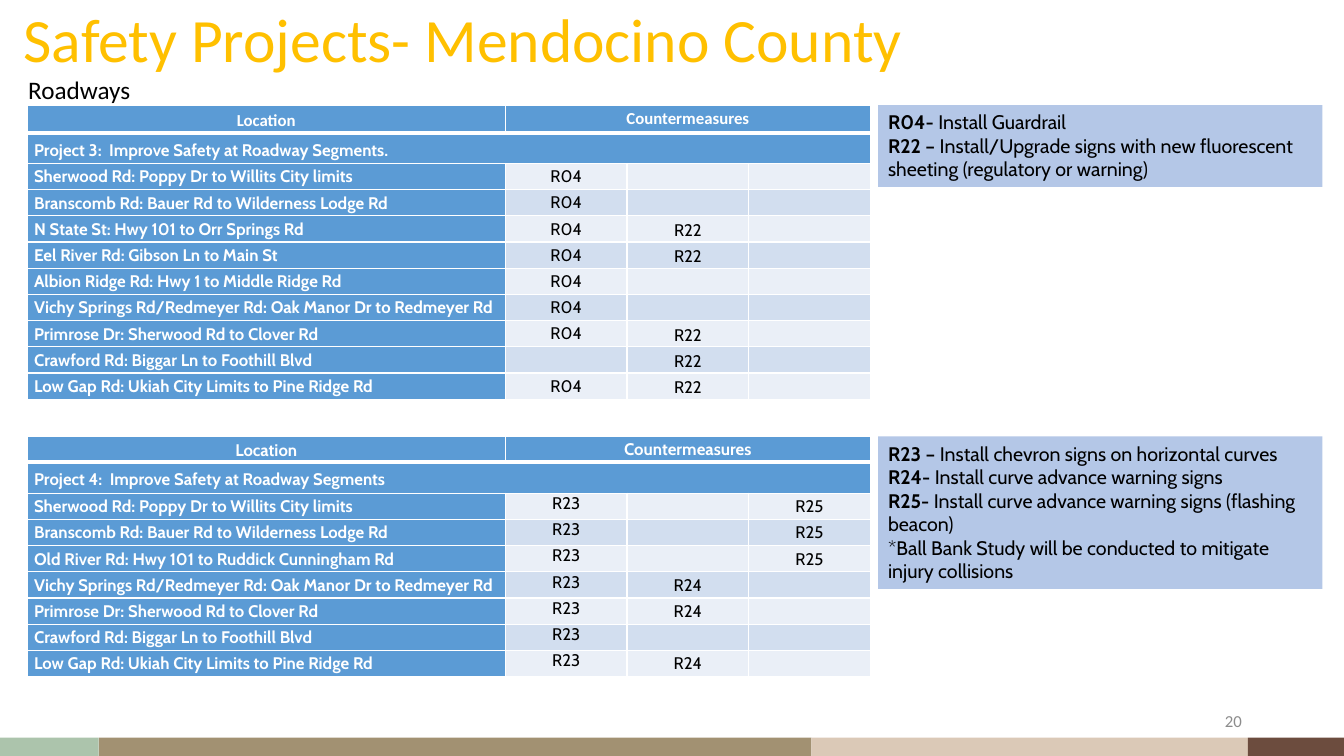
import lxml.etree
import pptx
import pptx.dml.color
import pptx.enum.shapes
import pptx.enum.text
import pptx.oxml.ns
import pptx.util

Cm = pptx.util.Cm
Pt = pptx.util.Pt
RGBColor = pptx.dml.color.RGBColor
PP_ALIGN = pptx.enum.text.PP_ALIGN
MSO_ANCHOR = pptx.enum.text.MSO_ANCHOR
RECTANGLE = pptx.enum.shapes.MSO_SHAPE.RECTANGLE
qn = pptx.oxml.ns.qn

WHITE = RGBColor(0xFF, 0xFF, 0xFF)
BLACK = RGBColor(0, 0, 0)
GOLD = RGBColor(0xFF, 0xC0, 0x00)
GRAY = RGBColor(0x8C, 0x8C, 0x8C)
BLUE = RGBColor(0x5B, 0x9B, 0xD5)
BAND_LIGHT = RGBColor(0xEA, 0xEF, 0xF7)
BAND_DARK = RGBColor(0xD2, 0xDE, 0xEF)
NOTE_BLUE = RGBColor(0xB4, 0xC7, 0xE7)
SAND = RGBColor(0xDB, 0xC9, 0xB7)
BROWN = RGBColor(0x6C, 0x4C, 0x3E)
SAGE = RGBColor(0xAC, 0xC4, 0xAC)
KHAKI = RGBColor(0xA2, 0x91, 0x72)


def add_run(paragraph, text, size, font_name, color, bold=False):
    run = paragraph.add_run()
    run.text = text
    run.font.size = Pt(size)
    run.font.name = font_name
    run.font.bold = bold
    run.font.color.rgb = color


def add_rectangle(left, top, width, height, color):
    shape = slide.shapes.add_shape(RECTANGLE, Cm(left), Cm(top), Cm(width), Cm(height))
    shape.shadow.inherit = False
    shape.fill.solid()
    shape.fill.fore_color.rgb = color
    shape.line.fill.background()
    return shape


presentation = pptx.Presentation()
presentation.slide_width = Cm(33.87)
presentation.slide_height = Cm(19.05)
slide = presentation.slides.add_slide(presentation.slide_layouts[5])

# Footer stripe
stripe_left = 0
for width, color in [(2.49, SAGE), (17.96, KHAKI), (11, SAND), (2.42, BROWN)]:
    add_rectangle(stripe_left, 18.59, width, 0.46, color)
    stripe_left += width

# Title
title = slide.shapes.title
title.left, title.top, title.width, title.height = Cm(0.34), Cm(-0.76), Cm(29.21), Cm(3.68)
title.text_frame.vertical_anchor = MSO_ANCHOR.MIDDLE
paragraph = title.text_frame.paragraphs[0]
paragraph.alignment = PP_ALIGN.LEFT
paragraph.line_spacing = 0.9
add_run(paragraph, "Safety Projects- Mendocino County", 44, "Calibri", GOLD)

# Subtitle and slide number
labels = [
    ("Roadways", 0.46, 1.75, 3.81, 18, BLACK, PP_ALIGN.LEFT, MSO_ANCHOR.TOP),
    ("20", 23.93, 17.65, 7.62, 12, GRAY, PP_ALIGN.RIGHT, MSO_ANCHOR.MIDDLE),
]
for text, left, top, width, size, color, alignment, anchor in labels:
    text_box = slide.shapes.add_textbox(Cm(left), Cm(top), Cm(width), Cm(1.02))
    text_box.text_frame.word_wrap = True
    text_box.text_frame.vertical_anchor = anchor
    paragraph = text_box.text_frame.paragraphs[0]
    paragraph.alignment = alignment
    add_run(paragraph, text, size, "Calibri", color)

# Project tables: top, header heights, header font, code anchor, rows
SHERWOOD = "Sherwood Rd: Poppy Dr to Willits City limits"
BRANSCOMB = "Branscomb Rd: Bauer Rd to Wilderness Lodge Rd"
VICHY = "Vichy Springs Rd/Redmeyer Rd: Oak Manor Dr to Redmeyer Rd"
PRIMROSE = "Primrose Dr: Sherwood Rd to Clover Rd"
CRAWFORD = "Crawford Rd: Biggar Ln to Foothill Blvd"
LOW_GAP = "Low Gap Rd: Ukiah City Limits to Pine Ridge Rd"
HEADER = ("Location", "Countermeasures", "", "")
projects = [
    (2.65, (0.71, 0.76), "Calibri", MSO_ANCHOR.MIDDLE, [
        HEADER,
        ("Project 3:  Improve Safety at Roadway Segments.", "", "", ""),
        (SHERWOOD, "R04", "", ""),
        (BRANSCOMB, "R04", "", ""),
        ("N State St: Hwy 101 to Orr Springs Rd", "R04", "R22", ""),
        ("Eel River Rd: Gibson Ln to Main St", "R04", "R22", ""),
        ("Albion Ridge Rd: Hwy 1 to Middle Ridge Rd", "R04", "", ""),
        (VICHY, "R04", "", ""),
        (PRIMROSE, "R04", "R22", ""),
        (CRAWFORD, "", "R22", ""),
        (LOW_GAP, "R04", "R22", ""),
    ]),
    (11, (0.64, 0.79), "Cabin", MSO_ANCHOR.TOP, [
        HEADER,
        ("Project 4:  Improve Safety at Roadway Segments", "", "", ""),
        (SHERWOOD, "R23", "", "R25"),
        (BRANSCOMB, "R23", "", "R25"),
        ("Old River Rd: Hwy 101 to Ruddick Cunningham Rd", "R23", "", "R25"),
        (VICHY, "R23", "R24", ""),
        (PRIMROSE, "R23", "R24", ""),
        (CRAWFORD, "R23", "", ""),
        (LOW_GAP, "R23", "R24", ""),
    ]),
]
for top, header_heights, header_font, code_anchor, rows in projects:
    heights = list(header_heights) + [0.66] * (len(rows) - 2)
    table = slide.shapes.add_table(
        len(rows), 4, Cm(0.68), Cm(top), Cm(21.25), Cm(sum(heights))).table
    table.horz_banding = False
    for column, width in zip(table.columns, (12.06, 3.06, 3.07, 3.06)):
        column.width = Cm(width)
    for row_index, texts in enumerate(rows):
        table.rows[row_index].height = Cm(heights[row_index])
        is_header = row_index < 2
        for column_index, text in enumerate(texts):
            cell = table.cell(row_index, column_index)
            is_blue = is_header or column_index == 0
            cell.margin_left = cell.margin_right = Cm(0.18)
            cell.margin_top = cell.margin_bottom = 0
            if is_header:
                cell.vertical_anchor = MSO_ANCHOR.MIDDLE
            else:
                cell.vertical_anchor = code_anchor if column_index else MSO_ANCHOR.TOP

            # White borders, thicker under the column headings
            properties = cell._tc.get_or_add_tcPr()
            for side in ("lnL", "lnR", "lnT", "lnB"):
                thick = (row_index, side) in ((0, "lnB"), (1, "lnT"))
                border = lxml.etree.SubElement(
                    properties, qn("a:" + side), w=str(Pt(3 if thick else 1)))
                fill = lxml.etree.SubElement(border, qn("a:solidFill"))
                lxml.etree.SubElement(fill, qn("a:srgbClr"), val=str(WHITE))
            cell.fill.solid()
            band = BAND_DARK if row_index % 2 else BAND_LIGHT
            cell.fill.fore_color.rgb = BLUE if is_blue else band

            paragraph = cell.text_frame.paragraphs[0]
            if column_index or row_index == 0:
                paragraph.alignment = PP_ALIGN.CENTER
            paragraph.line_spacing = 1.0 if column_index == 1 else 1.15
            if text:
                add_run(paragraph, text, 12, header_font if row_index == 0 else "Cabin",
                        WHITE if is_blue else BLACK, is_blue)
            else:
                # Keep empty cells as low as their row
                lxml.etree.SubElement(paragraph._p, qn("a:endParaRPr"), sz="1200")
    table.cell(0, 1).merge(table.cell(0, 3))
    table.cell(1, 0).merge(table.cell(1, 3))

# Countermeasure notes: code in bold, then its meaning
notes = [
    (2.65, 2.06, [
        ("R04- ", "Install Guardrail"),
        ("R22 – ", "Install/Upgrade signs with new fluorescent sheeting "
                   "(regulatory or warning)"),
    ]),
    (11, 3.84, [
        ("R23 – ", "Install chevron signs on horizontal curves"),
        ("R24-", " Install curve advance warning signs"),
        ("R25- ", "Install curve advance warning signs (flashing beacon)"),
        ("", "*Ball Bank Study will be conducted to mitigate injury collisions"),
    ]),
]
for top, height, lines in notes:
    note = add_rectangle(22.13, top, 11.2, height, NOTE_BLUE)
    frame = note.text_frame
    frame.word_wrap = True
    frame.vertical_anchor = MSO_ANCHOR.TOP
    for index, (code, meaning) in enumerate(lines):
        paragraph = frame.add_paragraph() if index else frame.paragraphs[0]
        paragraph.alignment = PP_ALIGN.LEFT
        if code:
            add_run(paragraph, code, 14, "Cabin", BLACK, True)
        add_run(paragraph, meaning, 14, "Cabin", BLACK)

presentation.save("out.pptx")
